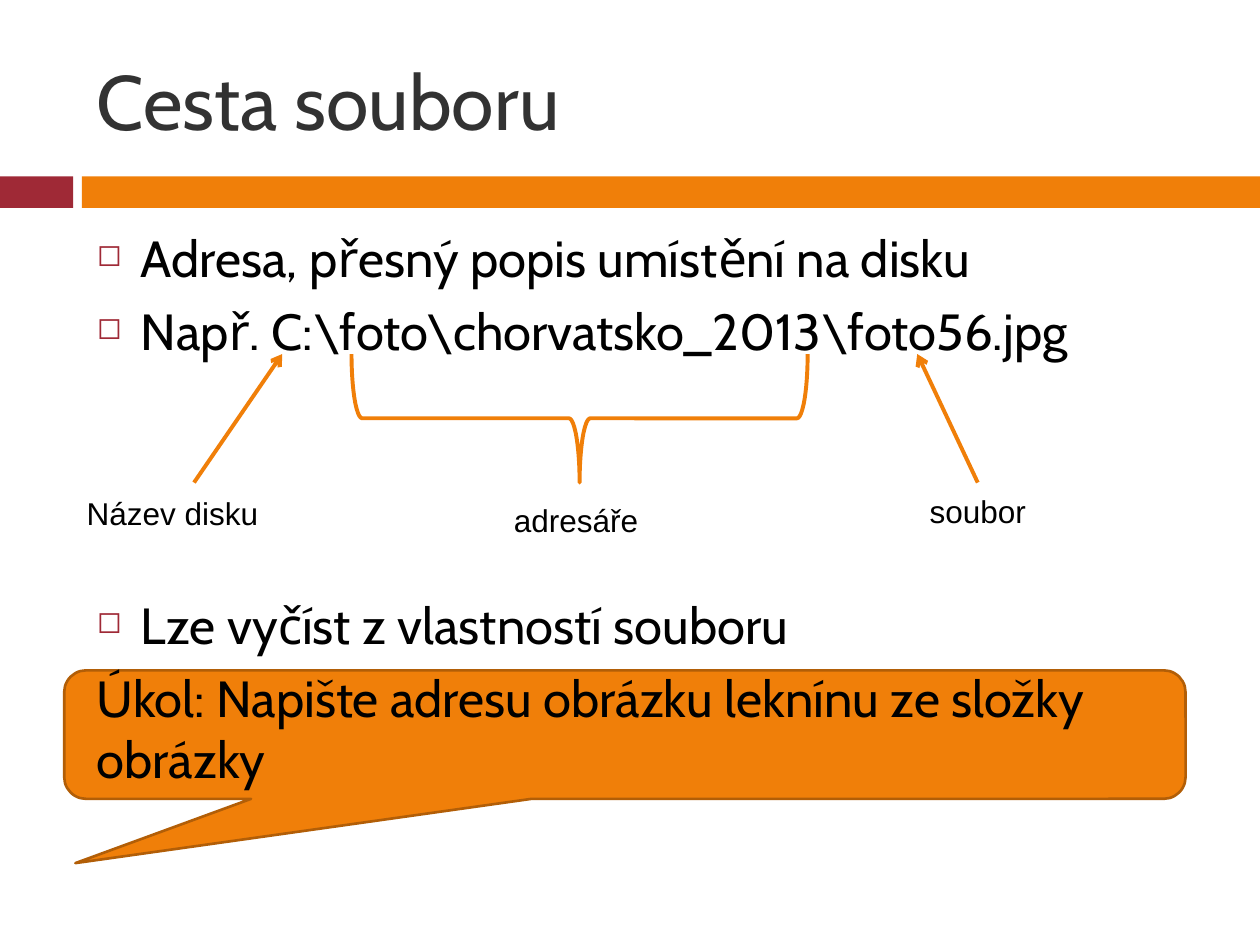
from lxml import etree
from pptx import Presentation
from pptx.dml.color import RGBColor
from pptx.enum.shapes import MSO_CONNECTOR, MSO_SHAPE
from pptx.enum.text import MSO_ANCHOR
from pptx.oxml.ns import qn
from pptx.util import Inches, Pt

RECTANGLE = MSO_SHAPE.RECTANGLE
CALLOUT = MSO_SHAPE.ROUNDED_RECTANGULAR_CALLOUT
BRACE = MSO_SHAPE.RIGHT_BRACE
STRAIGHT = MSO_CONNECTOR.STRAIGHT
TOP = MSO_ANCHOR.TOP
MIDDLE = MSO_ANCHOR.MIDDLE


def color(code):
    return RGBColor.from_string(code)


class SlideBuilder:
    orange = "F07F09"
    dark_orange = "B25E07"
    red = "9F2936"
    gray = "323232"
    black = "000000"
    heading_font = "Cabin"
    label_font = "Arial"

    def __init__(self, page):
        self.page = page

    def shape(self, kind, left, top, width, height, fill=None, line=None,
              weight=1, adjustments=(), rotation=0):
        shape = self.page.shapes.add_shape(
            kind, Inches(left), Inches(top), Inches(width), Inches(height))
        shape.shadow.inherit = False
        shape.rotation = rotation
        for index, value in enumerate(adjustments):
            shape.adjustments[index] = value
        if fill:
            shape.fill.solid()
            shape.fill.fore_color.rgb = color(fill)
        else:
            shape.fill.background()
        if line:
            shape.line.color.rgb = color(line)
            shape.line.width = Pt(weight)
        else:
            shape.line.fill.background()

    def arrow(self, start, end):
        arrow = self.page.shapes.add_connector(
            STRAIGHT, *(Inches(value) for value in (*start, *end)))
        arrow.line.color.rgb = color(self.orange)
        arrow.line.width = Pt(2.25)
        outline = arrow._element.spPr.find(qn("a:ln"))
        etree.SubElement(outline, qn("a:tailEnd"), type="arrow")
        etree.SubElement(arrow._element.spPr, qn("a:effectLst"))

    def text_box(self, left, top, width, height, anchor=TOP):
        box = self.page.shapes.add_textbox(
            Inches(left), Inches(top), Inches(width), Inches(height))
        frame = box.text_frame
        frame.word_wrap = True
        frame.vertical_anchor = anchor
        return frame

    def fill_para(self, para, text, size, font, code):
        para.text = text
        para.font.size = Pt(size)
        para.font.name = font
        para.font.color.rgb = color(code)

    def bullet(self, para):
        properties = para._p.get_or_add_pPr()
        properties.set("marL", str(Inches(0.35)))
        properties.set("indent", str(-Inches(0.35)))
        bullet_color = etree.SubElement(properties, qn("a:buClr"))
        etree.SubElement(bullet_color, qn("a:srgbClr"), val=self.red)
        etree.SubElement(properties, qn("a:buSzPct"), val="60000")
        etree.SubElement(properties, qn("a:buChar"), char="◻")

    def title(self, text):
        frame = self.text_box(0.67, 0.25, 8.92, 1.08, MIDDLE)
        self.fill_para(frame.paragraphs[0], text, 44, self.heading_font, self.gray)

    def body(self, items):
        frame = self.text_box(0.67, 1.75, 8.92, 4.92)
        for index, (text, bulleted, space) in enumerate(items):
            para = frame.add_paragraph() if index else frame.paragraphs[0]
            para.space_before = Pt(space)
            if bulleted:
                self.bullet(para)
            self.fill_para(para, text, 29, self.heading_font, self.black)

    def label(self, text, left, top, width):
        frame = self.text_box(left, top, width, 0.4)
        self.fill_para(frame.paragraphs[0], text, 18, self.label_font, self.black)


def main():
    deck = Presentation()
    deck.slide_width = Inches(10)
    deck.slide_height = Inches(7.5)
    builder = SlideBuilder(deck.slides.add_slide(deck.slide_layouts[6]))

    builder.shape(RECTANGLE, 0, 1.4, 0.58, 0.25, fill=builder.red)
    builder.shape(RECTANGLE, 0.65, 1.4, 9.35, 0.25, fill=builder.orange)
    builder.shape(CALLOUT, 0.51, 5.32, 8.9, 1.02, fill=builder.orange,
                  line=builder.dark_orange, weight=1.5,
                  adjustments=(-0.49, 1.0, 0.17))
    builder.title("Cesta souboru")
    builder.body([
        ("Adresa, přesný popis umístění na disku", True, 7),
        (r"Např. C:\foto\chorvatsko_2013\foto56.jpg", True, 7),
        ("Lze vyčíst z vlastností souboru", True, 133),
        ("Úkol: Napište adresu obrázku leknínu ze složky obrázky", False, 7),
    ])
    builder.arrow((1.54, 3.83), (2.24, 2.81))
    builder.arrow((7.76, 3.83), (7.28, 2.81))
    builder.shape(BRACE, 4.09, 1.51, 1.02, 3.62, line=builder.orange,
                  weight=2.25, rotation=90)
    builder.label("Název disku", 0.59, 3.87, 2.2)
    builder.label("adresáře", 3.98, 3.93, 1.73)
    builder.label("soubor", 7.28, 3.86, 1.65)

    deck.save("out.pptx")


if __name__ == "__main__":
    main()
